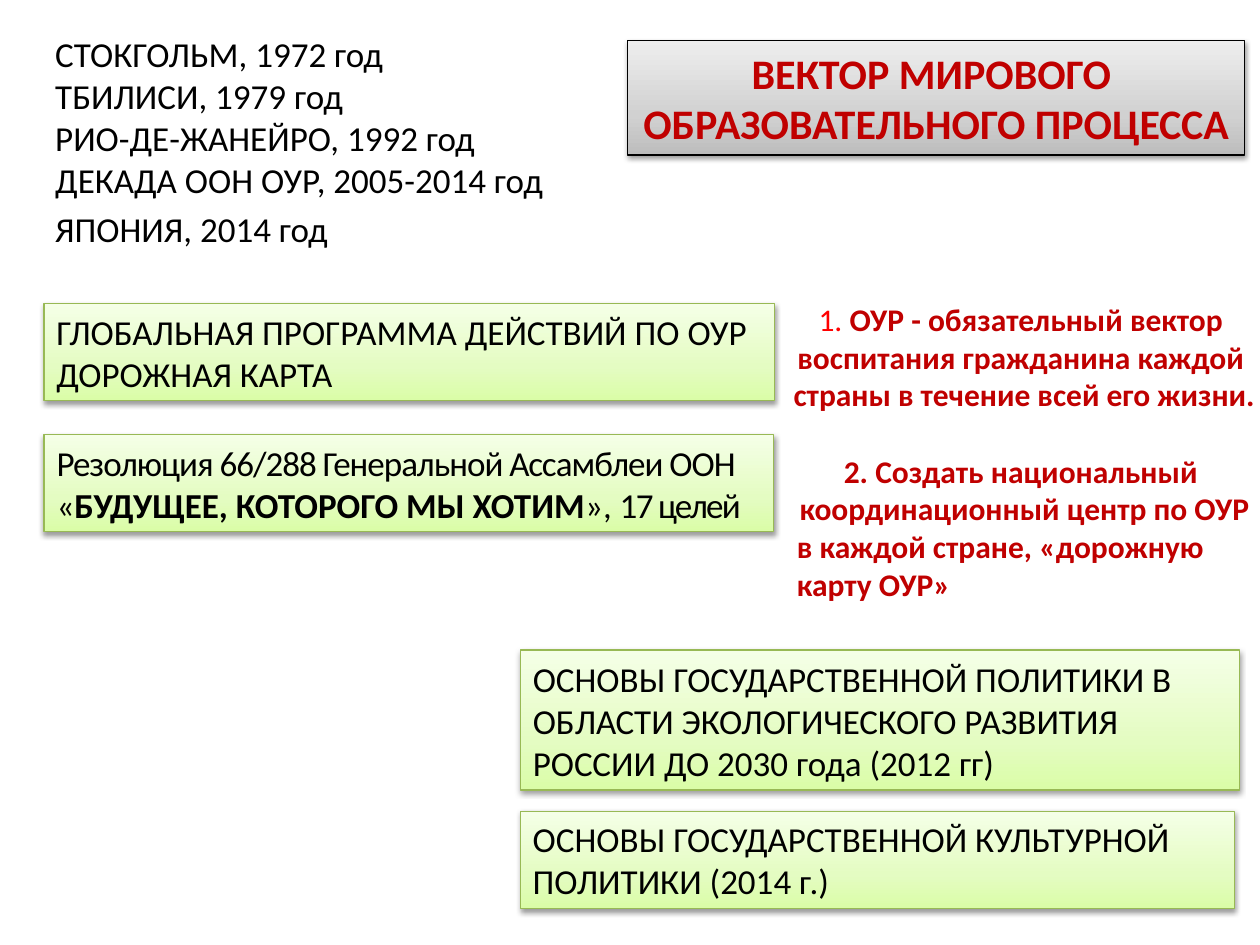
"""Build the slide on the vector of the world education process."""
from copy import deepcopy
from dataclasses import dataclass

from lxml.etree import SubElement
from pptx import Presentation
from pptx.dml.color import RGBColor
from pptx.enum.shapes import MSO_SHAPE
from pptx.enum.text import MSO_AUTO_SIZE, PP_ALIGN
from pptx.oxml.ns import qn
from pptx.util import Inches, Pt


@dataclass(frozen=True)
class Theme:
    font: str = "Calibri"
    black: str = "000000"
    red: str = "C00000"
    bright_red: str = "FF0000"
    green_line: str = "98B955"
    green_fill: tuple = ("DAFDA7", "E4FCC2", "F5FFE7")
    gray_fill: tuple = ("BDBDBD", "D1D1D1", "EEEEEE")
    title: int = 24
    body: int = 20
    note: int = 18


theme = Theme()


def write(shape, lines, size=theme.body, color=theme.black, bold=False,
          align=PP_ALIGN.LEFT, wrap=True, left_from=None, gaps=None):
    frame = shape.text_frame
    frame.word_wrap = wrap
    frame.auto_size = MSO_AUTO_SIZE.SHAPE_TO_FIT_TEXT
    for index, line in enumerate(lines):
        paragraph = frame.add_paragraph() if index else frame.paragraphs[0]
        is_left = left_from is not None and index >= left_from
        paragraph.alignment = PP_ALIGN.LEFT if is_left else align
        paragraph.space_before = Pt((gaps or {}).get(index, 0))
        for part in [(line, {})] if isinstance(line, str) else line:
            text, style = part
            run = paragraph.add_run()
            run.text = text
            run.font.name = theme.font
            run.font.size = Pt(size)
            run.font.bold = style.get("bold", bold)
            run.font.color.rgb = RGBColor.from_string(style.get("color", color))
            if "spacing" in style:
                run.font._element.set("spc", str(style["spacing"]))


def add_panel(left, top, width, height, stops, line_color):
    panel = slide.shapes.add_shape(
        MSO_SHAPE.RECTANGLE, Inches(left), Inches(top), Inches(width), Inches(height))
    panel.fill.gradient()
    panel.fill.gradient_angle = 90
    stop_list = panel._element.spPr.find(".//" + qn("a:gsLst"))
    stop_list.append(deepcopy(stop_list[-1]))
    for stop, position, color in zip(panel.fill.gradient_stops, (0, 0.35, 1), stops):
        stop.position = position
        stop.color.rgb = RGBColor.from_string(color)
    panel.line.color.rgb = RGBColor.from_string(line_color)
    panel.line.width = Pt(0.75)
    panel.shadow.inherit = False
    effects = panel._element.spPr.find(qn("a:effectLst"))
    shadow = SubElement(effects, qn("a:outerShdw"), blurRad="40000", dist="20000",
                        dir="5400000", rotWithShape="0")
    shadow_color = SubElement(shadow, qn("a:srgbClr"), val=theme.black)
    SubElement(shadow_color, qn("a:alpha"), val="38000")
    return panel


presentation = Presentation()
presentation.slide_width = Inches(10)
presentation.slide_height = Inches(7.5)
slide = presentation.slides.add_slide(presentation.slide_layouts[6])

milestones = slide.shapes.add_textbox(Inches(0.34), Inches(0.21), Inches(4.1), Inches(1.85))
write(milestones, [
    "СТОКГОЛЬМ, 1972 год",
    "ТБИЛИСИ, 1979 год",
    "РИО-ДЕ-ЖАНЕЙРО, 1992 год",
    "ДЕКАДА ООН ОУР, 2005-2014 год",
    "ЯПОНИЯ, 2014 год",
], wrap=False, gaps={4: 4})

documents = [
    ((0.35, 2.41, 5.8, 0.77), False,
     ["ГЛОБАЛЬНАЯ ПРОГРАММА ДЕЙСТВИЙ ПО ОУР", "ДОРОЖНАЯ КАРТА"]),
    ((4.13, 5.16, 5.71, 1.11), True,
     ["ОСНОВЫ ГОСУДАРСТВЕННОЙ ПОЛИТИКИ В", "ОБЛАСТИ ЭКОЛОГИЧЕСКОГО РАЗВИТИЯ",
      "РОССИИ ДО 2030 года (2012 гг)"]),
    ((4.13, 6.44, 5.67, 0.77), True,
     ["ОСНОВЫ ГОСУДАРСТВЕННОЙ КУЛЬТУРНОЙ", "ПОЛИТИКИ (2014 г.)"]),
    ((0.35, 3.45, 5.79, 0.77), True,
     [[("Резолюция 66/288 Генеральной Ассамблеи ООН", {"spacing": -60})],
      [("«", {}), ("БУДУЩЕЕ, КОТОРОГО МЫ ХОТИМ", {"bold": True}), ("», ", {}),
       ("17 целей", {"spacing": -100})]]),
]
for box, wrap, lines in documents:
    write(add_panel(*box, theme.green_fill, theme.green_line), lines, wrap=wrap)

title = add_panel(4.98, 0.32, 4.9, 0.91, theme.gray_fill, theme.black)
write(title, ["ВЕКТОР МИРОВОГО ", "ОБРАЗОВАТЕЛЬНОГО ПРОЦЕССА"], size=theme.title,
      color=theme.red, bold=True, align=PP_ALIGN.CENTER, wrap=False)

goals = slide.shapes.add_textbox(Inches(6.17), Inches(2.33), Inches(3.92), Inches(2.52))
write(goals, [
    [("1. ", {"color": theme.bright_red, "bold": False}), ("ОУР - обязательный вектор ", {})],
    "воспитания гражданина каждой ",
    "страны в течение всей его жизни.",
    "2. Создать национальный ",
    "координационный центр по ОУР",
    " в каждой стране, «дорожную",
    " карту ОУР»",
], size=theme.note, color=theme.red, bold=True, align=PP_ALIGN.CENTER,
    wrap=False, left_from=5, gaps={3: 22})

presentation.save("out.pptx")
